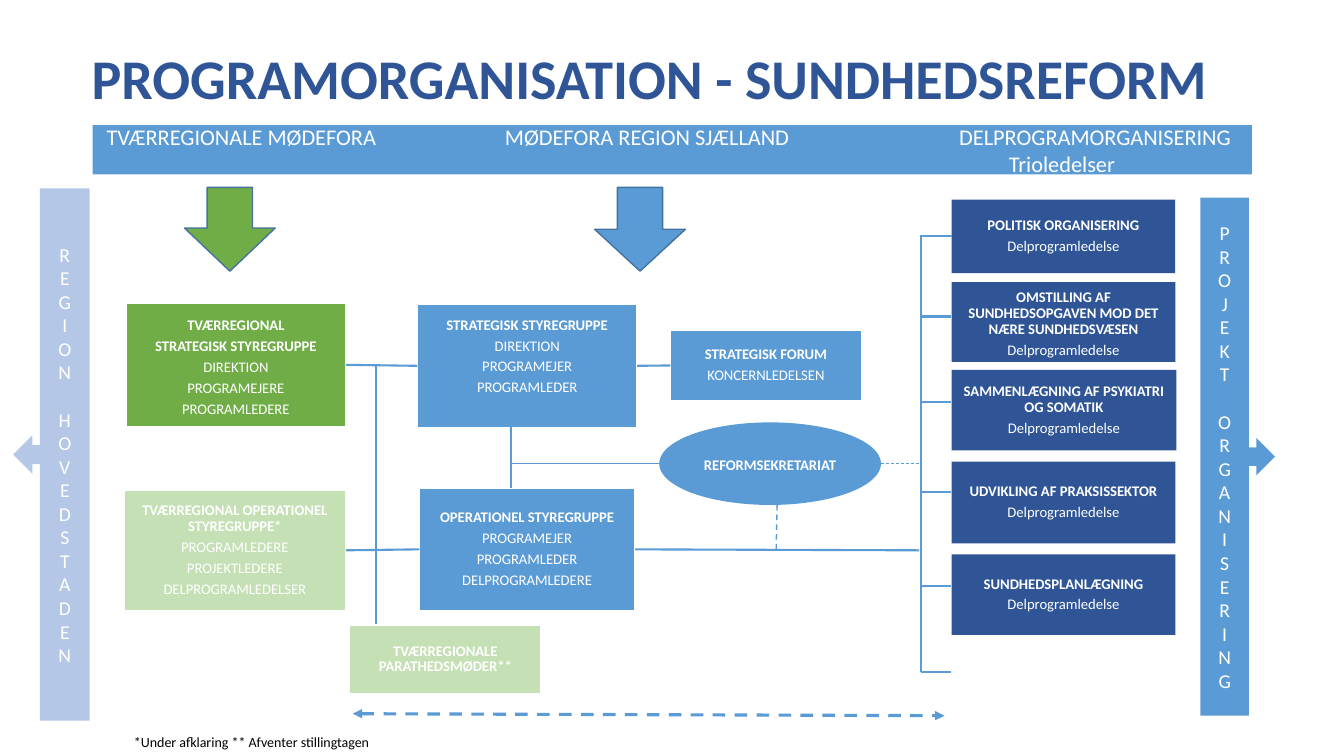
"""Build the programme organisation slide for the health reform."""
from lxml.etree import SubElement
from pptx import Presentation
from pptx.dml.color import RGBColor
from pptx.enum.dml import MSO_LINE
from pptx.enum.shapes import MSO_CONNECTOR, MSO_SHAPE
from pptx.enum.text import MSO_ANCHOR, MSO_AUTO_SIZE, PP_ALIGN
from pptx.oxml.ns import qn
from pptx.util import Pt

BLUE, NAVY, PALE_BLUE = "5B9BD5", "2F5597", "B4C7E7"
GREEN, PALE_GREEN, OUTLINE = "70AD47", "C5E0B4", "43739E"
WHITE, BLACK = "FFFFFF", "000000"
TOP, LEFT, BOTTOM, RIGHT = range(4)


def assign(target, values):
    for name, value in values.items():
        setattr(target, name, value)


def paint(fill, colour):
    if colour is None:
        fill.background()
    else:
        fill.solid()
        fill.fore_color.rgb = RGBColor.from_string(colour)


def write(paragraph, text, size, colour=WHITE, bold=False, **layout):
    assign(paragraph, layout)
    run = paragraph.add_run()
    run.text = text
    assign(run.font, {"name": "Calibri", "size": Pt(size), "bold": bold})
    paint(run.font.fill, colour)


def paragraphs(frame, count):
    return [frame.paragraphs[0]] + [frame.add_paragraph() for _ in range(count - 1)]


def set_frame(frame, **values):
    assign(frame, {"word_wrap": True, "vertical_anchor": MSO_ANCHOR.MIDDLE,
                   "auto_size": MSO_AUTO_SIZE.NONE, **values})


def add_block(slide, kind, area, fill, outline=None):
    block = slide.shapes.add_shape(kind, *map(Pt, area))
    block.shadow.inherit = False
    paint(block.fill, fill)
    paint(block.line.fill, outline)
    if outline:
        block.line.width = Pt(1)
    return block


def add_group_box(slide, area, fill, headings, members=(), outline=WHITE, shift=0,
                  kind=MSO_SHAPE.RECTANGLE):
    """Draw a box with bold headings over plain members, its text moved down by shift."""
    box = add_block(slide, kind, area, fill, outline)
    frame = box.text_frame
    set_frame(frame, margin_left=Pt(0.7), margin_right=Pt(0.7),
              margin_top=Pt(0.7 + max(2 * shift, 0)),
              margin_bottom=Pt(0.7 + max(-2 * shift, 0)))
    lines = [*headings, *members]
    for index, paragraph in enumerate(paragraphs(frame, len(lines))):
        write(paragraph, lines[index], 10.5, bold=index < len(headings),
              alignment=PP_ALIGN.CENTER, line_spacing=0.9, space_after=Pt(3.6))
    return box


def add_side_banner(slide, kind, area, fill, words):
    frame = add_block(slide, kind, area, fill).text_frame
    set_frame(frame)
    letters = [(letter, 17 if number and not place else 0)
               for number, word in enumerate(words.split())
               for place, letter in enumerate(word)]
    for paragraph, (letter, gap) in zip(paragraphs(frame, len(letters)), letters):
        write(paragraph, letter, 14, alignment=PP_ALIGN.CENTER, space_before=Pt(gap))


def add_header(slide):
    frame = add_block(slide, MSO_SHAPE.RECTANGLE, (66.2, 89.3, 828, 35.3), BLUE).text_frame
    set_frame(frame, margin_left=Pt(10))
    rows = [("TVÆRREGIONALE MØDEFORA\tMØDEFORA REGION SJÆLLAND\tDELPROGRAMORGANISERING",
             (284.5, 609)),
            ("\tTrioledelser", (644.5,))]
    for paragraph, (text, stops) in zip(paragraphs(frame, len(rows)), rows):
        tabs = SubElement(paragraph._p.get_or_add_pPr(), qn("a:tabLst"))
        for stop in stops:
            SubElement(tabs, qn("a:tab"), pos=str(Pt(stop)), algn="l")
        write(paragraph, text, 16, alignment=PP_ALIGN.LEFT)


def add_link(slide, start, end, width=1.5, dashed=False, arrows=False,
             begin_at=None, end_at=None):
    link = slide.shapes.add_connector(MSO_CONNECTOR.STRAIGHT, *map(Pt, (*start, *end)))
    paint(link.line.fill, BLUE)
    link.line.width = Pt(width)
    if dashed:
        link.line.dash_style = MSO_LINE.DASH
    if arrows:
        for tip in ("a:headEnd", "a:tailEnd"):
            SubElement(link.line._get_or_add_ln(), qn(tip), type="triangle")
    SubElement(link._element.spPr, qn("a:effectLst"))
    if begin_at:
        link.begin_connect(*begin_at)
    if end_at:
        link.end_connect(*end_at)


def add_title(slide):
    title = slide.shapes.title
    assign(title, {"left": Pt(58.3), "top": Pt(27.4), "width": Pt(828), "height": Pt(61.2)})
    set_frame(title.text_frame)
    write(title.text_frame.paragraphs[0], "PROGRAMORGANISATION - SUNDHEDSREFORM", 40,
          NAVY, True, alignment=PP_ALIGN.LEFT, line_spacing=0.9)


def add_footnote(slide):
    frame = slide.shapes.add_textbox(Pt(88.6), Pt(520.6), Pt(502.6), Pt(19.4)).text_frame
    set_frame(frame, vertical_anchor=MSO_ANCHOR.TOP)
    write(frame.paragraphs[0], "*Under afklaring ** Afventer stillingtagen", 10, BLACK)


def add_subprogrammes(slide):
    """Draw the subprogramme boxes with the spine and branches that join them."""
    subprogrammes = [
        ("POLITISK ORGANISERING", 142.6, 159.8, 52.6, 0),
        ("OMSTILLING AF SUNDHEDSOPGAVEN MOD DET NÆRE SUNDHEDSVÆSEN", 201.6, 160, 56.9, 1.4),
        ("SAMMENLÆGNING AF PSYKIATRI OG SOMATIK", 264.2, 160.6, 57.6, 0),
        ("UDVIKLING AF PRAKSISSEKTOR", 329.8, 160, 58.3, 0),
        ("SUNDHEDSPLANLÆGNING", 396, 160, 57.6, 0),
    ]
    boxes = [add_group_box(slide, (679.7, top, width, height), NAVY, [name],
                           ["Delprogramledelse"], None, shift)
             for name, top, width, height, shift in subprogrammes]
    spine = 658.1
    add_link(slide, (spine, 480.2), (spine, 168))
    add_link(slide, (spine, 168.9), (679.7, 168.9), end_at=(boxes[0], LEFT))
    for branch in (226.1, 287.3, 351.4, 418.3, 480.2):
        add_link(slide, (spine, branch), (679.3, branch))


def add_steering_groups(slide):
    """Draw the steering groups, the secretariat and the lines between them."""
    forum = add_group_box(slide, (478.8, 236.2, 136.8, 49.7), BLUE,
                          ["STRATEGISK FORUM"], ["KONCERNLEDELSEN"])
    strategic = add_group_box(slide, (298.1, 217.4, 157, 87.8), BLUE,
                              ["STRATEGISK STYREGRUPPE"],
                              ["DIREKTION", "PROGRAMEJER", "PROGRAMLEDER"], shift=-6.5)
    operational = add_group_box(slide, (299.5, 348.5, 154.1, 87.8), BLUE,
                                ["OPERATIONEL STYREGRUPPE"],
                                ["PROGRAMEJER", "PROGRAMLEDER", "DELPROGRAMLEDERE"])
    add_group_box(slide, (470.9, 301.7, 158.4, 59), BLUE, ["REFORMSEKRETARIAT"],
                  outline=None, shift=1.5, kind=MSO_SHAPE.OVAL)
    cross_strategic = add_group_box(slide, (90, 216.7, 157, 87.8), GREEN,
                                    ["TVÆRREGIONAL", "STRATEGISK STYREGRUPPE"],
                                    ["DIREKTION", "PROGRAMEJERE", "PROGRAMLEDERE"], shift=2)
    cross_operational = add_group_box(slide, (88.6, 349.9, 158.4, 86.4), PALE_GREEN,
                                      ["TVÆRREGIONAL OPERATIONEL STYREGRUPPE*"],
                                      ["PROGRAMLEDERE", "PROJEKTLEDERE",
                                       "DELPROGRAMLEDELSER"])
    add_link(slide, (268.6, 260.6), (268.6, 449.3))
    add_group_box(slide, (249.8, 446.4, 136.8, 49), PALE_GREEN,
                  ["TVÆRREGIONALE PARATHEDSMØDER**"])
    add_link(slide, (247, 260.6), (298.1, 261.3),
             begin_at=(cross_strategic, RIGHT), end_at=(strategic, LEFT))
    add_link(slide, (455.1, 261.3), (478.8, 261.1),
             begin_at=(strategic, RIGHT), end_at=(forum, LEFT))
    add_link(slide, (247, 393.1), (299.5, 392.4),
             begin_at=(cross_operational, RIGHT), end_at=(operational, LEFT))
    add_link(slide, (453.6, 392.4), (656.6, 393.1), begin_at=(operational, RIGHT))
    add_link(slide, (365, 304.6), (365, 348.5))
    add_link(slide, (470.9, 331.2), (365, 331.2), 0.5)
    add_link(slide, (629.3, 331.2), (658.1, 331.2), 0.5, dashed=True)
    add_link(slide, (555.1, 360.7), (554.4, 393.1), 1, dashed=True)
    add_link(slide, (252, 509.8), (674.6, 511.2), 2.25, dashed=True, arrows=True)


def main():
    presentation = Presentation()
    assign(presentation, {"slide_width": Pt(960), "slide_height": Pt(540)})
    slide = presentation.slides.add_slide(presentation.slide_layouts[5])
    add_title(slide)
    add_header(slide)
    add_block(slide, MSO_SHAPE.DOWN_ARROW, (424.8, 133.9, 64.8, 59.8), BLUE, OUTLINE)
    cross_arrow = add_block(slide, MSO_SHAPE.DOWN_ARROW, (131.8, 133.9, 64.8, 59.8),
                            GREEN, OUTLINE)
    cross_arrow.adjustments[1] = 0.515
    add_subprogrammes(slide)
    add_steering_groups(slide)
    add_side_banner(slide, MSO_SHAPE.LEFT_ARROW_CALLOUT, (9.4, 134.6, 54.7, 380.2),
                    PALE_BLUE, "REGION HOVEDSTADEN")
    add_side_banner(slide, MSO_SHAPE.RIGHT_ARROW_CALLOUT, (857.5, 141.1, 53.3, 370.1),
                    BLUE, "PROJEKT ORGANISERING")
    add_footnote(slide)
    presentation.save("out.pptx")


if __name__ == "__main__":
    main()
